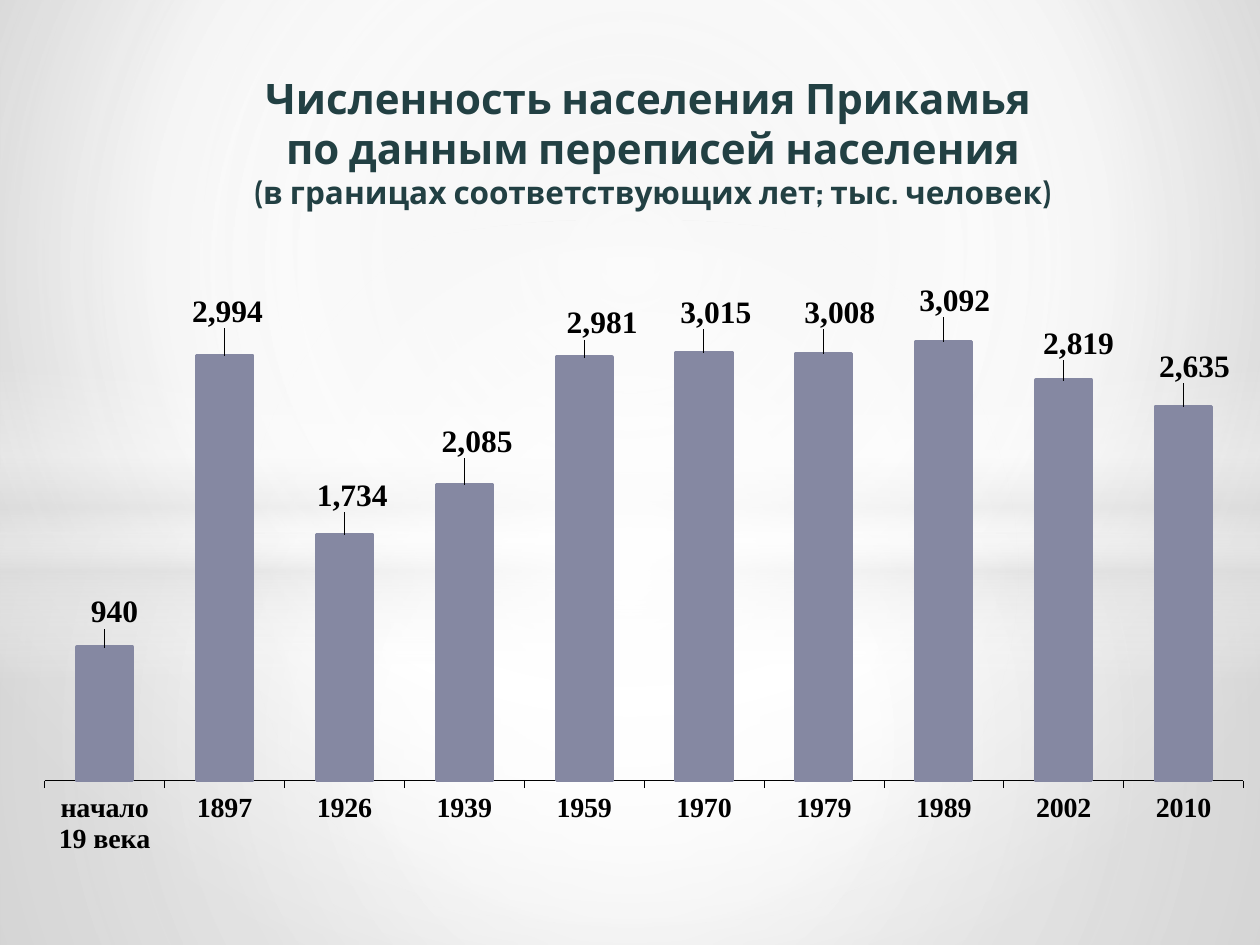
"""Build a slide with a column chart of the population of Prikamye by census."""
import pptx
import pptx.chart.data
import pptx.dml.color
import pptx.enum.chart
import pptx.enum.shapes
import pptx.enum.text
import pptx.oxml
import pptx.oxml.ns
import pptx.util

PX = 914400 / 126
hue = pptx.dml.color.RGBColor.from_string
qn = pptx.oxml.ns.qn
Pt = pptx.util.Pt
names = pptx.enum.chart


def blend(node, stops, rect=None):
    """Replace the gradient under node by stops of (place, colour, opacity)."""
    grad = node.find(".//" + qn("a:gradFill"))
    marks = "".join(
        f'<a:gs pos="{pos * 1000}"><a:srgbClr val="{tint}">'
        f'<a:alpha val="{alpha * 1000}"/></a:srgbClr></a:gs>'
        for pos, tint, alpha in stops)
    tail = '<a:lin ang="5400000" scaled="0"/>'
    if rect:
        sides = " ".join(f'{key}="{val * 1000}"' for key, val in zip("ltrb", rect))
        tail = f'<a:path path="circle"><a:fillToRect {sides}/></a:path>'
    grad.getparent().replace(grad, pptx.oxml.parse_xml(
        f'<a:gradFill {pptx.oxml.ns.nsdecls("a")} rotWithShape="1">'
        f'<a:gsLst>{marks}</a:gsLst>{tail}</a:gradFill>'))


def place(node, index, parts):
    """Give a chart part a manual layout from (tag, value) pairs."""
    for old in node.findall(qn("c:layout")):
        node.remove(old)
    body = "".join(f'<c:{tag} val="{val}"/>' for tag, val in parts)
    node.insert(index, pptx.oxml.parse_xml(
        f'<c:layout {pptx.oxml.ns.nsdecls("c")}>'
        f'<c:manualLayout>{body}</c:manualLayout></c:layout>'))


deck = pptx.Presentation()
deck.slide_width, deck.slide_height = round(1260 * PX), round(945 * PX)
slide = deck.slides.add_slide(deck.slide_layouts[0])
sub = slide.placeholders[1]._element
sub.getparent().remove(sub)

slide.background.fill.gradient()
blend(slide._element, [(0, "D5D5D5", 100), (60, "FFFFFF", 100), (100, "B2B2B2", 100)],
      (20, 10, 20, 60))

MID = (50, 50, 50, 50)
kinds = pptx.enum.shapes.MSO_SHAPE
panels = [
    (kinds.RECTANGLE, 533, 412, MID,
     [(0, "FFFFFF", 91), (37, "FFFFFF", 76), (100, "DEDEDE", 79)]),
    (kinds.RECTANGLE, 0, 533, MID,
     [(0, "FFFFFF", 89), (48, "FFFFFF", 62), (100, "DEDEDE", 79)]),
    (kinds.RECTANGLE, 365, 315, None,
     [(0, "FFFFFF", 0), (29, "FFFFFF", 30), (45, "DEDEDE", 40),
      (55, "FFFFFF", 26), (65, "DEDEDE", 60), (100, "FFFFFF", 0)]),
    (kinds.OVAL, 220, 703, MID, [(0, "FFFFFF", 100), (54, "FFFFFF", 0)]),
]
tree = slide.shapes._spTree
for step, (kind, top, high, rect, stops) in enumerate(panels):
    panel = slide.shapes.add_shape(kind, 0, round(top * PX), round(1260 * PX), round(high * PX))
    panel.shadow.inherit = False
    panel.line.fill.background()
    panel.fill.gradient()
    blend(panel._element, stops, rect)
    tree.insert(2 + step, panel._element)

fonts = []
title = slide.shapes.title
box = {"left": 105, "top": 66, "width": 1071, "height": 179}
for key, val in box.items():
    setattr(title, key, round(val * PX))
frame = title.text_frame
form = {"word_wrap": True, "auto_size": pptx.enum.text.MSO_AUTO_SIZE.NONE,
        "vertical_anchor": pptx.enum.text.MSO_ANCHOR.TOP}
for key, val in form.items():
    setattr(frame, key, val)
para = frame.paragraphs[0]
para.alignment = pptx.enum.text.PP_ALIGN.CENTER
para._p.get_or_add_pPr().set("marL", str(round(25 * PX)))
lines = [("Численность населения Прикамья ", 24),
         ("по данным переписей населения", 24),
         ("(в границах соответствующих лет; тыс. человек)", 18)]
for words, size in lines:
    run = para.add_run()
    run.text = words
    para.add_line_break()
    fonts.append((run.font, "Cabin", size, "224043"))

data = pptx.chart.data.CategoryChartData(number_format="#,##0")
data.categories = ["начало 19 века", "1897", "1926", "1939", "1959",
                   "1970", "1979", "1989", "2002", "2010"]
data.add_series("Series 1", [940, 2994, 1734, 2085, 2981, 3015, 3008, 3092, 2819, 2635])
wide, high = 1211, 617
chart = slide.shapes.add_chart(
    names.XL_CHART_TYPE.COLUMN_CLUSTERED, round(35 * PX), round(284 * PX),
    round(wide * PX), round(high * PX), data).chart
chart.has_legend = chart.has_title = False
area = chart._chartSpace.find(".//" + qn("c:plotArea"))
place(area, 0, [("layoutTarget", "inner"), ("xMode", "edge"), ("yMode", "edge"),
                ("x", 0.008), ("y", 0.081), ("w", 0.99), ("h", 0.722)])

years, scale = chart.category_axis, chart.value_axis
years.format.line.color.rgb = hue("000000")
years.format.line.width = Pt(0.25)
years.major_tick_mark = names.XL_TICK_MARK.OUTSIDE
form = {"minimum_scale": 0, "maximum_scale": 3100, "has_major_gridlines": False,
        "major_tick_mark": names.XL_TICK_MARK.OUTSIDE,
        "tick_label_position": names.XL_TICK_LABEL_POSITION.NONE}
for key, val in form.items():
    setattr(scale, key, val)
scale.format.line.fill.background()

plot = chart.plots[0]
plot.gap_width = 116
plot.vary_by_categories = False
bars = plot.series[0]
bars.format.fill.solid()
bars.format.fill.fore_color.rgb = bars.format.line.color.rgb = hue("8588A2")
bars.format.line.width = Pt(2)
tags = bars.data_labels
tags.show_value = True
tags.number_format = "#,##0"
tags.number_format_is_linked = False
face = "Times New Roman"
fonts += [(chart.font, face, 12, "000000"), (years.tick_labels.font, face, 16, "000000"),
          (tags.font, face, 18, "000000")]

shifts = [(10, 13), (3, 22), (8, 17), (13, 21), (18, 12),
          (12, 18), (16, 19), (11, 19), (15, 15), (11, 18)]
for step, (right, up) in enumerate(shifts):
    tag = bars.points[step].data_label
    tag.position = names.XL_LABEL_POSITION.OUTSIDE_END
    fonts.append((tag.font, face, 18, "000000"))
    node = tags._element.findall(qn("c:dLbl"))[step]
    place(node, 1, [("x", round(right / wide, 4)), ("y", round(-up / high, 4))])

for font, face, size, tint in fonts:
    for key, val in {"name": face, "size": Pt(size), "bold": True}.items():
        setattr(font, key, val)
    font.color.rgb = hue(tint)

deck.save("out.pptx")
